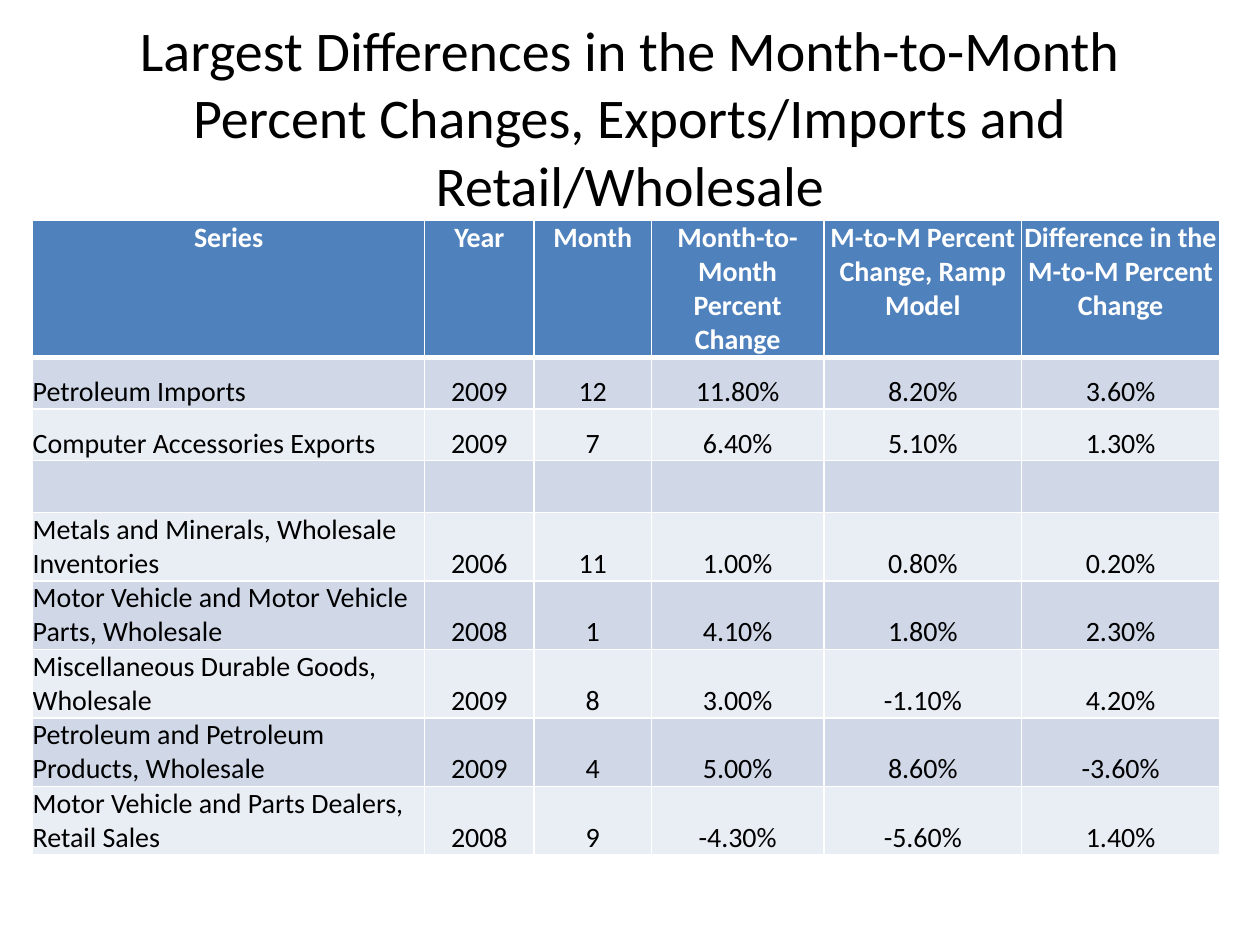
from lxml.etree import SubElement
from pptx import Presentation
from pptx.dml.color import RGBColor
from pptx.enum.text import MSO_ANCHOR as Anchor, PP_ALIGN as Align
from pptx.oxml.ns import qn
from pptx.util import Inches, Pt

TITLE = ("Largest Differences in the Month-to-Month Percent Changes, "
         "Exports/Imports and Retail/Wholesale")
ROWS = [
    ("Series", "Year", "Month", "Month-to-Month Percent Change",
     "M-to-M Percent Change, Ramp Model", "Difference in the M-to-M Percent Change"),
    ("Petroleum Imports", "2009", "12", "11.80%", "8.20%", "3.60%"),
    ("Computer Accessories Exports", "2009", "7", "6.40%", "5.10%", "1.30%"),
    ("", "", "", "", "", ""),
    ("Metals and Minerals, Wholesale Inventories", "2006", "11", "1.00%", "0.80%", "0.20%"),
    ("Motor Vehicle and Motor Vehicle Parts, Wholesale", "2008", "1", "4.10%", "1.80%", "2.30%"),
    ("Miscellaneous Durable Goods, Wholesale", "2009", "8", "3.00%", "-1.10%", "4.20%"),
    ("Petroleum and Petroleum Products, Wholesale", "2009", "4", "5.00%", "8.60%", "-3.60%"),
    ("Motor Vehicle and Parts Dealers, Retail Sales", "2008", "9", "-4.30%", "-5.60%", "1.40%"),
]
COLUMN_WIDTHS = [3.11, 0.87, 0.93, 1.37, 1.57, 1.57]
ROW_HEIGHT = 0.41
HEADER_FILL, BAND_FILLS = "4F81BD", ("E9EDF4", "D0D8E8")
WHITE, BLACK = "FFFFFF", "000000"
TITLE_FONT = {"name": "Calibri", "size": Pt(32), "bold": False}
HEADER_FONT = {"name": "Calibri", "size": Pt(16), "bold": True}
BODY_FONT = {**HEADER_FONT, "bold": False}
MARGINS = dict.fromkeys(("margin_left", "margin_top", "margin_right", "margin_bottom"), 0)


def paint(target, color):
    target.rgb = RGBColor.from_string(color)


def set_all(target, values):
    for name, value in values.items():
        setattr(target, name, value)


def write(para, text, font, color, align):
    para.alignment = align
    if text:
        span = para.add_run()
        span.text = text
        set_all(span.font, font)
        paint(span.font.color, color)


def add_borders(cell, widths):
    properties = cell._tc.get_or_add_tcPr()
    for side, width in widths.items():
        line = SubElement(properties, qn(f"a:ln{side}"), w=str(Pt(width)))
        SubElement(SubElement(line, qn("a:solidFill")), qn("a:srgbClr"), val=WHITE)


def add_title(page):
    title = page.shapes.title
    set_all(title, {"left": Inches(0.5), "top": Inches(0.3),
                    "width": Inches(9), "height": Inches(1.25)})
    title.text_frame.vertical_anchor = Anchor.MIDDLE
    write(title.text_frame.paragraphs[0], TITLE, TITLE_FONT, BLACK, Align.CENTER)


def add_series_table(page):
    table = page.shapes.add_table(
        len(ROWS), len(COLUMN_WIDTHS), Inches(0.26), Inches(1.75),
        Inches(sum(COLUMN_WIDTHS)), Inches(ROW_HEIGHT * len(ROWS))).table
    for column, width in zip(table.columns, COLUMN_WIDTHS):
        column.width = Inches(width)
    for r, values in enumerate(ROWS):
        header = r == 0
        table.rows[r].height = Inches(ROW_HEIGHT)
        for c, text in enumerate(values):
            cell = table.cell(r, c)
            set_all(cell, MARGINS)
            cell.vertical_anchor = Anchor.TOP if header else Anchor.BOTTOM
            add_borders(cell, {"L": 1, "R": 1, "T": 3 if r == 1 else 1, "B": 3 if header else 1})
            cell.fill.solid()
            paint(cell.fill.fore_color, HEADER_FILL if header else BAND_FILLS[r % 2])
            write(cell.text_frame.paragraphs[0], text,
                  HEADER_FONT if header else BODY_FONT, WHITE if header else BLACK,
                  Align.CENTER if header or c else Align.LEFT)


def main():
    deck = Presentation()
    deck.slide_width, deck.slide_height = Inches(10), Inches(7.5)
    page = deck.slides.add_slide(deck.slide_layouts[5])
    add_title(page)
    add_series_table(page)
    deck.save("out.pptx")


if __name__ == "__main__":
    main()
